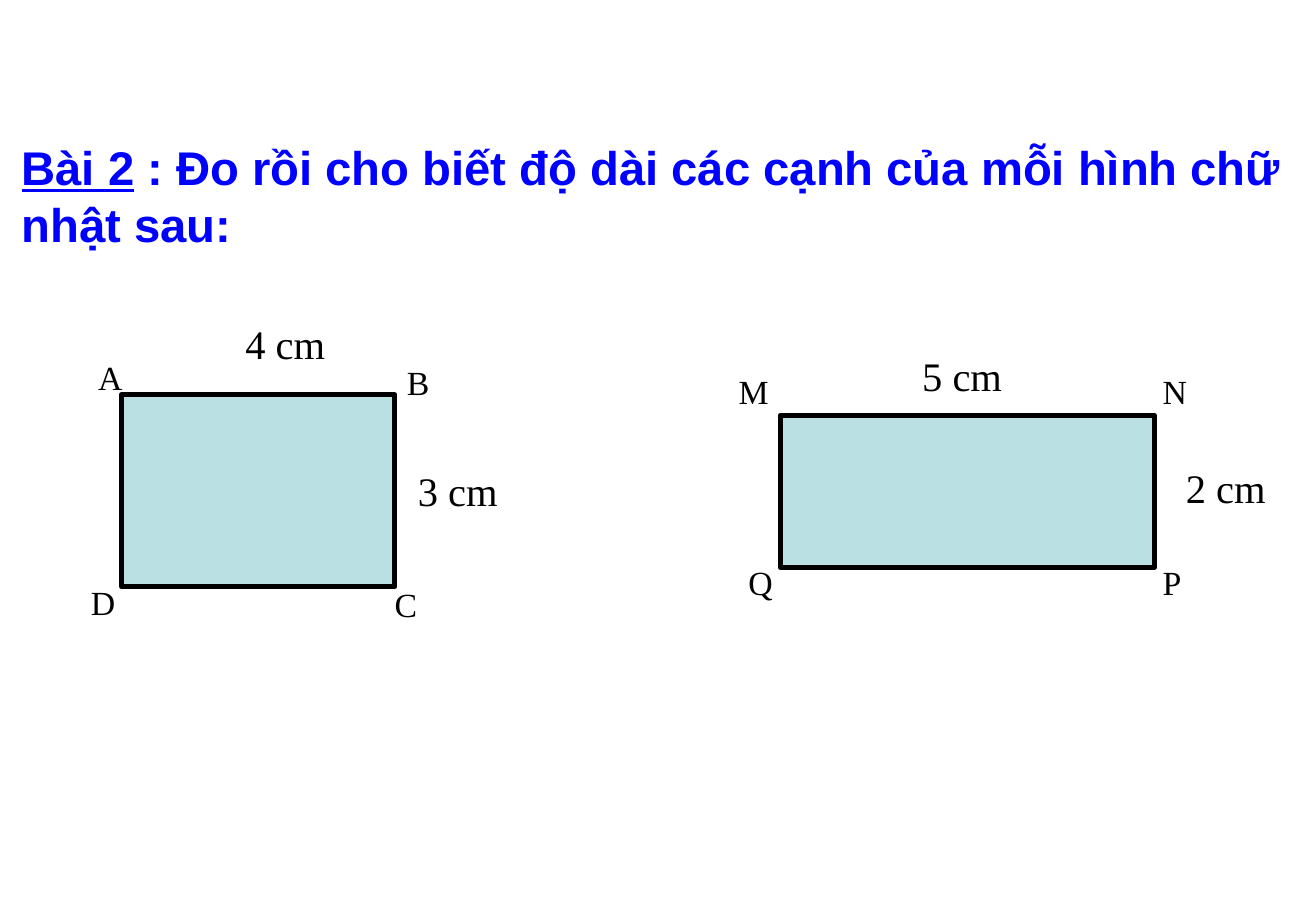
from pptx import Presentation
from pptx.dml.color import RGBColor
from pptx.enum.shapes import MSO_SHAPE
from pptx.util import Inches, Pt

BLUE = RGBColor(0x00, 0x00, 0xFF)
BLACK = RGBColor(0x00, 0x00, 0x00)
AQUA = RGBColor(0xBB, 0xE0, 0xE3)
SANS, SERIF = "Arial", "Times New Roman"

TITLE = ("Bài 2", " : Đo rồi cho biết độ dài các cạnh của mỗi hình chữ nhật sau:")

# Each figure: rectangle box, corner letters and side lengths with left, top
FIGURES = [
    {
        "box": (1, 3.25, 2.25, 1.58),
        "corners": [("A", 0.71, 2.89), ("B", 3.25, 2.93),
                    ("C", 3.15, 4.76), ("D", 0.65, 4.74)],
        "sides": [("4 cm", 1.92, 2.58), ("3 cm", 3.34, 3.79)],
    },
    {
        "box": (6.42, 3.42, 3.08, 1.25),
        "corners": [("M", 5.98, 3), ("N", 9.47, 3),
                    ("P", 9.47, 4.58), ("Q", 6.06, 4.58)],
        "sides": [("5 cm", 7.49, 2.84), ("2 cm", 9.66, 3.76)],
    },
]

deck = Presentation()
deck.slide_width, deck.slide_height = Inches(10.83), Inches(7.5)
slide = deck.slides.add_slide(deck.slide_layouts[6])


def add_text(runs, box, size, face, color):
    """Add a one-paragraph text box and return its paragraph."""
    frame = slide.shapes.add_textbox(*map(Inches, box)).text_frame
    frame.word_wrap = True
    para = frame.paragraphs[0]
    for words in runs:
        para.add_run().text = words
    font = para.font
    font.size, font.name = Pt(size), face
    font.color.rgb = color
    return para


def add_figure(box, corners, sides):
    rect = slide.shapes.add_shape(MSO_SHAPE.RECTANGLE, *map(Inches, box))
    rect.shadow.inherit = False
    rect.fill.solid()
    rect.fill.fore_color.rgb = AQUA
    rect.line.color.rgb = BLACK
    rect.line.width = Pt(3)
    for labels, size, wide, high in ((corners, 20, 0.58, 0.43),
                                     (sides, 24, 1.02, 0.5)):
        for words, left, top in labels:
            add_text([words], (left, top, wide, high), size, SERIF, BLACK)


title = add_text(TITLE, (0.08, 1.09, 10.83, 1.04), 28, SANS, BLUE)
title.font.bold = True
title.runs[0].font.underline = True

for figure in FIGURES:
    add_figure(**figure)

deck.save("out.pptx")
